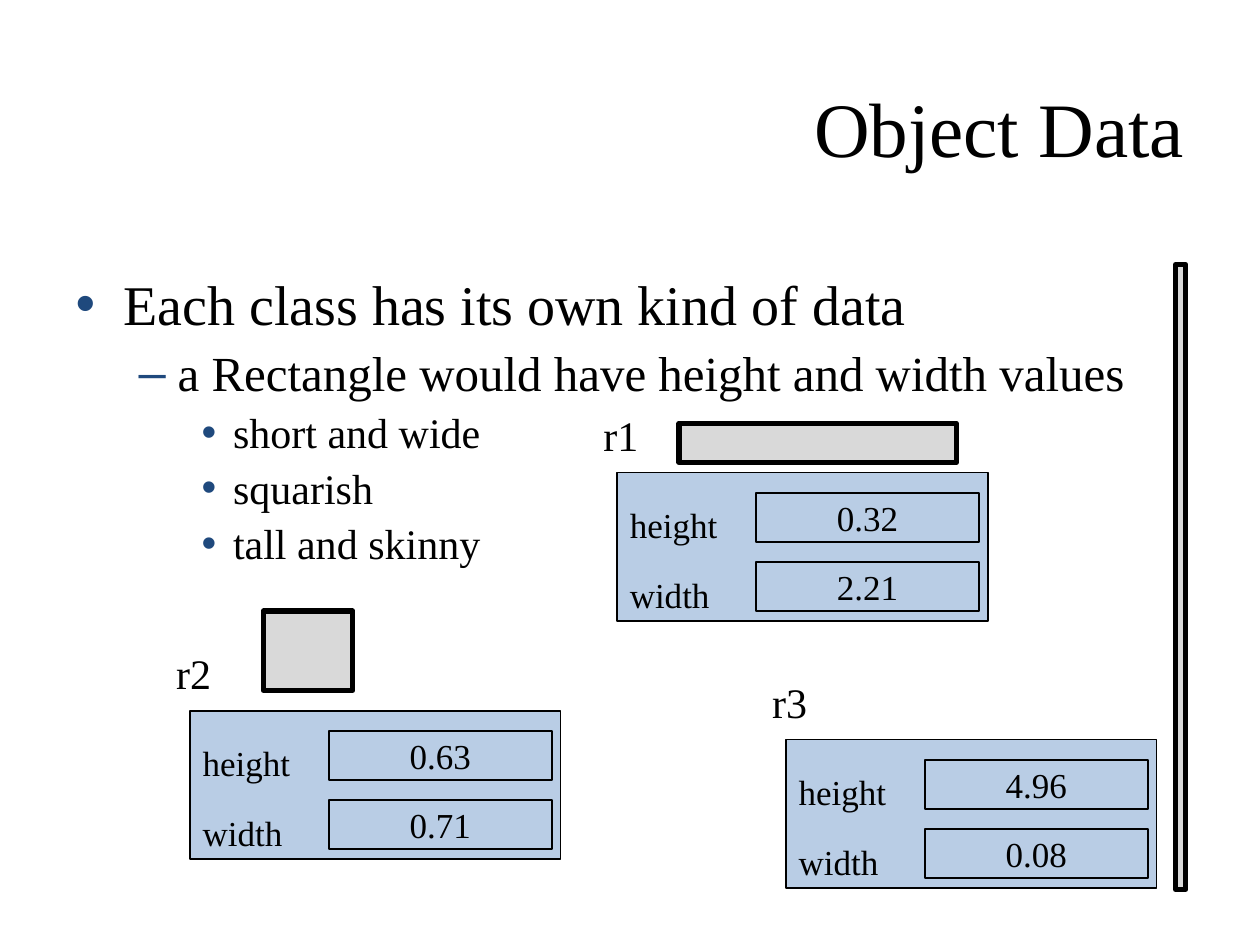
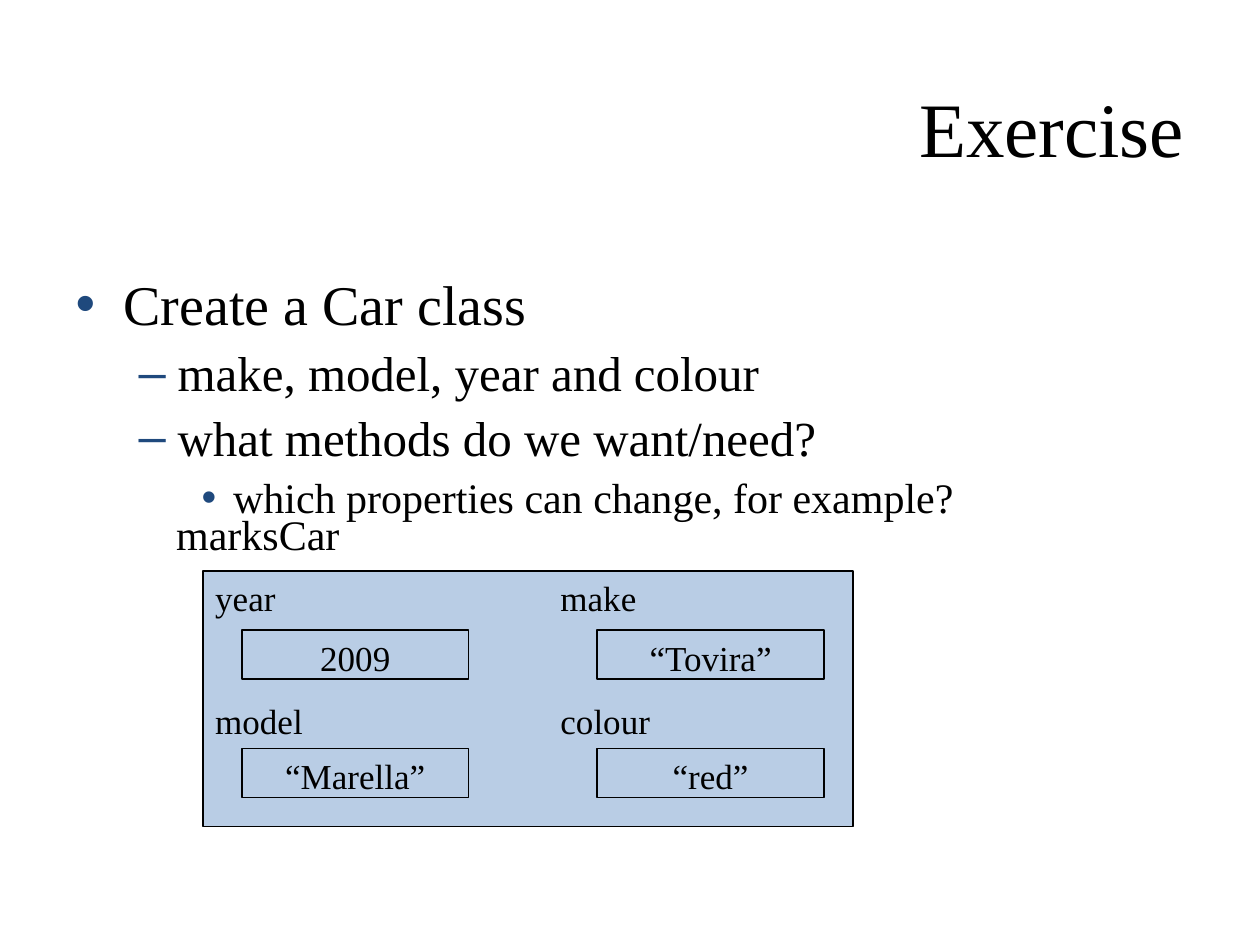
import pptx
import pptx.dml.color
import pptx.enum.shapes
import pptx.enum.text
import pptx.oxml
import pptx.oxml.ns
import pptx.util

Inches = pptx.util.Inches
Pt = pptx.util.Pt
ALIGN = pptx.enum.text.PP_ALIGN
ANCHOR = pptx.enum.text.MSO_ANCHOR
AUTOSIZE = pptx.enum.text.MSO_AUTO_SIZE
RECTANGLE = pptx.enum.shapes.MSO_SHAPE.RECTANGLE

COLORS = {"text": "000000", "bullet": "1F497D", "object": "B9CDE5", "figure": "D9D9D9"}
LEVELS = [
    {"size": 32, "left": 0.38, "hang": 0.38, "mark": "•", "before": 6.4},
    {"size": 28, "left": 0.81, "hang": 0.31, "mark": "–", "before": 3.4},
    {"size": 24, "left": 1.25, "hang": 0.25, "mark": "•", "before": 2.9},
]
FIELD_SIZE = 20


class ObjectDeck:
    """Slides that show objects as cards of named fields."""

    def __init__(self):
        self.deck = pptx.Presentation()
        self.deck.slide_width = Inches(10)
        self.deck.slide_height = Inches(7.5)
        self.slide = None

    def apply(self, target, formats):
        for name, value in formats.items():
            setattr(target, name, value)

    def place(self, shape, left, top, width, height):
        lengths = {"left": left, "top": top, "width": width, "height": height}
        self.apply(shape, {name: Inches(value) for name, value in lengths.items()})

    def set_text(self, paragraph, text, size, **formats):
        paragraph.text = text
        self.apply(paragraph, formats)
        self.apply(paragraph.font, {"name": "Times New Roman", "size": Pt(size)})
        paragraph.font.color.rgb = pptx.dml.color.RGBColor.from_string(COLORS["text"])

    def paragraphs(self, frame, count):
        return [frame.paragraphs[0]] + [frame.add_paragraph() for _ in range(count - 1)]

    def add_property(self, paragraph, xml):
        namespace = pptx.oxml.ns.nsdecls("a")
        element = pptx.oxml.parse_xml(xml.replace("NS", namespace, 1))
        paragraph._p.get_or_add_pPr().append(element)

    def new_slide(self, title, points):
        self.slide = self.deck.slides.add_slide(self.deck.slide_layouts[1])
        heading = self.slide.shapes.title
        self.place(heading, 0.5, 0.3, 9, 1.12)
        self.apply(heading.text_frame, {"vertical_anchor": ANCHOR.BOTTOM, "auto_size": AUTOSIZE.NONE})
        self.set_text(heading.text_frame.paragraphs[0], title, 44, alignment=ALIGN.RIGHT)
        self.bullets(points)

    def bullets(self, points):
        body = self.slide.placeholders[1]
        self.place(body, 0.5, 2, 9, 5.08)
        frame = body.text_frame
        self.apply(frame, {"auto_size": AUTOSIZE.NONE, "margin_top": Inches(0.14)})
        for index, (paragraph, (level, text)) in enumerate(zip(self.paragraphs(frame, len(points)), points)):
            style = LEVELS[level]
            properties = paragraph._p.get_or_add_pPr()
            properties.set("marL", str(Inches(style["left"])))
            properties.set("indent", str(-Inches(style["hang"])))
            self.add_property(paragraph, f'<a:buClr NS><a:srgbClr val="{COLORS["bullet"]}"/></a:buClr>')
            self.add_property(paragraph, f'<a:buChar NS char="{style["mark"]}"/>')
            before = Pt(style["before"] if index else 0)
            self.set_text(paragraph, text, style["size"], level=level, space_before=before)

    def rectangle(self, shapes, bounds, fill, line_width):
        shape = shapes.add_shape(RECTANGLE, *map(Inches, bounds))
        shape.shadow.inherit = False
        shape.fill.solid()
        shape.fill.fore_color.rgb = pptx.dml.color.RGBColor.from_string(COLORS[fill])
        shape.line.color.rgb = pptx.dml.color.RGBColor.from_string(COLORS["text"])
        shape.line.width = Pt(line_width)
        return shape

    def figure(self, *bounds):
        self.rectangle(self.slide.shapes, bounds, "figure", 3)

    def variable(self, shapes, name, left, top, width):
        label = shapes.add_textbox(*map(Inches, (left, top, width, 0.5)))
        self.apply(label.text_frame, {"word_wrap": True, "auto_size": AUTOSIZE.SHAPE_TO_FIT_TEXT})
        self.set_text(label.text_frame.paragraphs[0], name, 24)

    def card(self, shapes, bounds, rows, margin_top, row_gap, **formats):
        frame = self.rectangle(shapes, bounds, "object", 1).text_frame
        self.apply(frame, {"vertical_anchor": ANCHOR.TOP, "margin_top": Inches(margin_top)})
        for index, (paragraph, names) in enumerate(zip(self.paragraphs(frame, len(rows)), rows)):
            self.add_property(paragraph, f'<a:tabLst NS><a:tab pos="{Inches(2.74)}" algn="l"/></a:tabLst>')
            before = Pt(row_gap if index else 0)
            self.set_text(paragraph, names, FIELD_SIZE, alignment=ALIGN.LEFT, space_before=before, **formats)

    def value(self, shapes, text, left, top, width, anchor):
        frame = self.rectangle(shapes, (left, top, width, 0.39), "object", 1).text_frame
        frame.vertical_anchor = anchor
        self.set_text(frame.paragraphs[0], text, FIELD_SIZE, alignment=ALIGN.CENTER)

    def rectangle_object(self, name, left, top, sizes):
        shapes = self.slide.shapes.add_group_shape().shapes
        self.variable(shapes, name, left - 0.21, top - 0.55, 3.15)
        self.card(shapes, (left, top, 2.94, 1.18), ["height", "width"], 0.08, 2,
                  line_spacing=1.5, space_after=Pt(2))
        for row, size in enumerate(sizes):
            self.value(shapes, size, left + 1.1, top + 0.16 + 0.55 * row, 1.77, ANCHOR.MIDDLE)

    def car_object(self, name, left, top, values):
        shapes = self.slide.shapes.add_group_shape().shapes
        self.variable(shapes, name, left - 0.31, top - 0.54, 4.61)
        self.card(shapes, (left, top, 5.16, 2.03), ["year\tmake", "model\tcolour"], 0.05, 46)
        for index, text in enumerate(values):
            row, column = divmod(index, 2)
            self.value(shapes, text, left + 0.31 + 2.82 * column, top + 0.47 + 0.94 * row, 1.8, ANCHOR.TOP)


def main():
    talk = ObjectDeck()
    talk.new_slide("Object Data", [
        (0, "Each class has its own kind of data"),
        (1, "a Rectangle would have height and width values"),
        (2, "short and wide"),
        (2, "squarish"),
        (2, "tall and skinny"),
    ])
    talk.rectangle_object("r1", 4.9, 3.75, ["0.32", "2.21"])
    talk.rectangle_object("r2", 1.51, 5.64, ["0.63", "0.71"])
    talk.figure(5.39, 3.36, 2.2, 0.31)
    talk.figure(2.09, 4.85, 0.71, 0.63)
    talk.rectangle_object("r3", 6.24, 5.87, ["4.96", "0.08"])
    talk.figure(9.33, 2.1, 0.08, 4.96)

    talk.new_slide("Exercise", [
        (0, "Create a Car class"),
        (1, "make, model, year and colour"),
        (1, "what methods do we want/need?"),
        (2, "which properties can change, for example?"),
    ])
    talk.car_object("marksCar", 1.61, 4.53, ["2009", "“Tovira”", "“Marella”", "“red”"])
    talk.deck.save("out.pptx")


if __name__ == "__main__":
    main()
